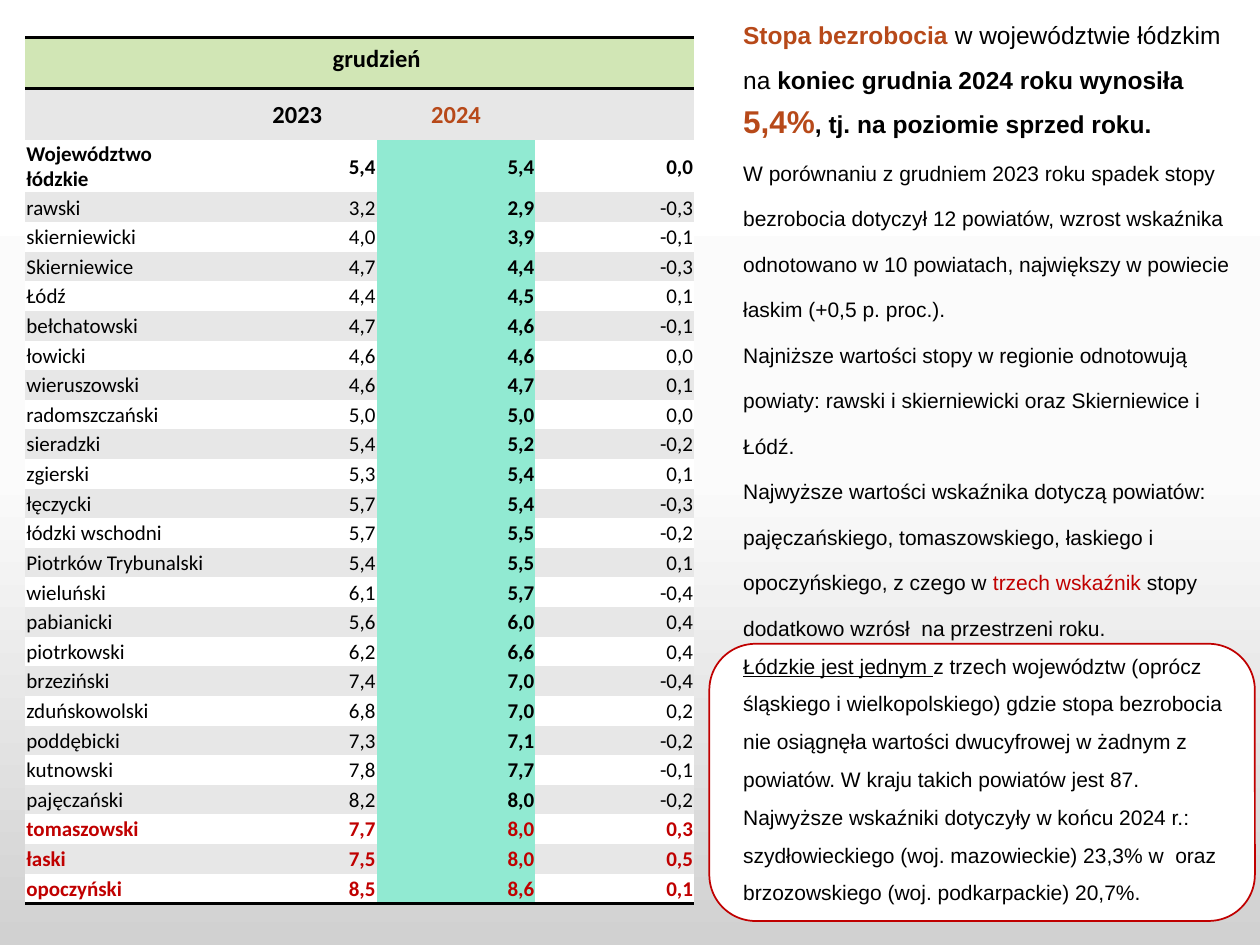
from copy import deepcopy

from pptx import Presentation
from pptx.dml.color import RGBColor
from pptx.enum import shapes, text
from pptx.oxml import parse_xml
from pptx.oxml.ns import nsdecls, qn
from pptx.util import Inches, Pt

BLACK = RGBColor(0x00, 0x00, 0x00)
WHITE = RGBColor(0xFF, 0xFF, 0xFF)
STRIPE = RGBColor(0xE7, 0xE7, 0xE7)
GREEN = RGBColor(0xD1, 0xE6, 0xB5)
MINT = RGBColor(0x91, 0xEA, 0xD2)
RUST = RGBColor(0xB7, 0x49, 0x19)
RED = RGBColor(0xC0, 0x00, 0x00)
BACKDROP = [(0, WHITE), (0.5, RGBColor(0xFB, 0xFB, 0xFB)), (1, RGBColor(0xD1, 0xD1, 0xD1))]

# Content: county, rate in 2023, rate in 2024, change
MONTH = "grudzień"
YEARS = ["", "2023", "2024", ""]
RATES = [
    ("Województwo łódzkie", "5,4", "5,4", "0,0"),
    ("rawski", "3,2", "2,9", "-0,3"),
    ("skierniewicki", "4,0", "3,9", "-0,1"),
    ("Skierniewice", "4,7", "4,4", "-0,3"),
    ("Łódź", "4,4", "4,5", "0,1"),
    ("bełchatowski", "4,7", "4,6", "-0,1"),
    ("łowicki", "4,6", "4,6", "0,0"),
    ("wieruszowski", "4,6", "4,7", "0,1"),
    ("radomszczański", "5,0", "5,0", "0,0"),
    ("sieradzki", "5,4", "5,2", "-0,2"),
    ("zgierski", "5,3", "5,4", "0,1"),
    ("łęczycki", "5,7", "5,4", "-0,3"),
    ("łódzki wschodni", "5,7", "5,5", "-0,2"),
    ("Piotrków Trybunalski", "5,4", "5,5", "0,1"),
    ("wieluński", "6,1", "5,7", "-0,4"),
    ("pabianicki", "5,6", "6,0", "0,4"),
    ("piotrkowski", "6,2", "6,6", "0,4"),
    ("brzeziński", "7,4", "7,0", "-0,4"),
    ("zduńskowolski", "6,8", "7,0", "0,2"),
    ("poddębicki", "7,3", "7,1", "-0,2"),
    ("kutnowski", "7,8", "7,7", "-0,1"),
    ("pajęczański", "8,2", "8,0", "-0,2"),
    ("tomaszowski", "7,7", "8,0", "0,3"),
    ("łaski", "7,5", "8,0", "0,5"),
    ("opoczyński", "8,5", "8,6", "0,1"),
]
HIGHEST = {"tomaszowski", "łaski", "opoczyński"}

# Paragraphs: line spacing, then runs of (text, size, colour, bold, underline)
COMMENTARY = [
    (Pt(26), [
        ("Stopa bezrobocia ", 14, RUST, True, False),
        ("w województwie łódzkim na ", 14, BLACK, False, False),
        ("koniec grudnia 2024 roku wynosiła ", 14, BLACK, True, False),
        ("5,4%", 18, RUST, True, False),
        (", tj. na poziomie sprzed roku.", 14, BLACK, True, False)]),
    (Pt(26), [
        ("W porównaniu z grudniem 2023 roku spadek stopy bezrobocia dotyczył 12 powiatów, "
         "wzrost wskaźnika odnotowano w 10 powiatach, największy w powiecie łaskim "
         "(+0,5 p. proc.).", 12, BLACK, False, False)]),
    (Pt(26), [
        ("Najniższe wartości stopy w regionie odnotowują powiaty: rawski i skierniewicki "
         "oraz Skierniewice i Łódź.", 12, BLACK, False, False)]),
    (Pt(26), [
        ("Najwyższe wartości wskaźnika dotyczą powiatów: pajęczańskiego, tomaszowskiego, "
         "łaskiego i opoczyńskiego, z czego w ", 12, BLACK, False, False),
        ("trzech wskaźnik", 12, RED, False, False),
        (" stopy dodatkowo wzrósł  na przestrzeni roku.", 12, BLACK, False, False)]),
    (1.5, [
        ("Łódzkie jest jednym ", 12, BLACK, False, True),
        ("z trzech województw (oprócz śląskiego i wielkopolskiego) gdzie stopa bezrobocia "
         "nie osiągnęła wartości dwucyfrowej w żadnym z powiatów. W kraju takich powiatów "
         "jest 87. Najwyższe wskaźniki dotyczyły w końcu 2024 r.: szydłowieckiego "
         "(woj. mazowieckie) 23,3% w  oraz brzozowskiego (woj. podkarpackie) 20,7%.",
         12, BLACK, False, False)]),
]

NO_GRID_STYLE = "{2D5ABB26-0587-4C30-8999-92F81FD0307C}"
TABLE_LEFT, TABLE_TOP, TABLE_WIDTH, TABLE_HEIGHT = 0.2, 0.3, 5.31, 6.86
NUMBER_WIDTH = 1.26
TOP_ROWS = [0.4, 0.4, 0.41]  # month, years, whole region


def style_run(run, font_name, size, color, bold, underline=False):
    font = run.font
    font.name, font.size, font.bold, font.underline = font_name, Pt(size), bold, underline
    font.color.rgb = color


def fill_cell(cell, fill):
    cell.fill.solid()
    cell.fill.fore_color.rgb = fill


def write_cell(cell, words, size, color, bold, align):
    cell.vertical_anchor = text.MSO_ANCHOR.MIDDLE
    cell.margin_left = cell.margin_right = cell.margin_top = Inches(0.01)
    cell.margin_bottom = 0
    cell.text = words
    paragraph = cell.text_frame.paragraphs[0]
    paragraph.alignment = align
    for run in paragraph.runs:
        style_run(run, "Calibri", size, color, bold)


def rule_cell(cell, *sides):
    """Black 2 pt rules on the given sides, listed in order: T before B."""
    for index, side in enumerate(sides):
        cell._tc.get_or_add_tcPr().insert(index, parse_xml(
            f'<a:ln{side} {nsdecls("a")} w="{Pt(2)}"><a:solidFill>'
            f'<a:srgbClr val="{BLACK}"/></a:solidFill></a:ln{side}>'))


prs = Presentation()
prs.slide_width, prs.slide_height = Inches(10), Inches(7.5)
slide = prs.slides.add_slide(prs.slide_layouts[6])

# Background gradient, top to bottom
backdrop = slide.background.fill
backdrop.gradient()
backdrop.gradient_angle = 270
stop_list = next(slide._element.iter(qn("a:gsLst")))
stop_list.append(deepcopy(stop_list[-1]))
for stop, (position, color) in zip(backdrop.gradient_stops, BACKDROP):
    stop.position = position
    stop.color.rgb = color

# Frame behind the last paragraph
frame = slide.shapes.add_shape(shapes.MSO_SHAPE.ROUNDED_RECTANGLE, Inches(5.63),
                               Inches(5.11), Inches(4.33), Inches(2.2))
frame.shadow.inherit = False
frame.fill.solid()
frame.fill.fore_color.rgb = WHITE
frame.line.color.rgb = RED
frame.line.width = Pt(1)

# Table grid
table = slide.shapes.add_table(len(RATES) + 2, 4, Inches(TABLE_LEFT), Inches(TABLE_TOP),
                               Inches(TABLE_WIDTH), Inches(TABLE_HEIGHT)).table
table._tbl.tblPr.find(qn("a:tableStyleId")).text = NO_GRID_STYLE
table.first_row = table.horz_banding = False
for column, width in zip(table.columns, [TABLE_WIDTH - 3 * NUMBER_WIDTH] + [NUMBER_WIDTH] * 3):
    column.width = Inches(width)
county_height = (TABLE_HEIGHT - sum(TOP_ROWS)) / (len(RATES) - 1)
for row, height in zip(table.rows, TOP_ROWS + [county_height] * (len(RATES) - 1)):
    row.height = Inches(height)

# Month and year headings
for col, year in enumerate(YEARS):
    month_cell, year_cell = table.cell(0, col), table.cell(1, col)
    fill_cell(month_cell, GREEN)
    rule_cell(month_cell, "T", "B")
    fill_cell(year_cell, STRIPE)
    if year:
        write_cell(year_cell, year, 14, RUST if year == "2024" else BLACK, True,
                   text.PP_ALIGN.CENTER)
month_title = table.cell(0, 1)
month_title.merge(table.cell(0, 2))
month_title.text = MONTH
month_title.text_frame.paragraphs[0].alignment = text.PP_ALIGN.CENTER
style_run(month_title.text_frame.paragraphs[0].runs[0], "Calibri", 14, BLACK, True)

# Rates, with the 2024 column picked out
for index, rates in enumerate(RATES):
    county = rates[0]
    for col, words in enumerate(rates):
        cell = table.cell(index + 2, col)
        bold = index == 0 or col == 2 or county in HIGHEST
        write_cell(cell, words, 12, RED if county in HIGHEST else BLACK, bold,
                   text.PP_ALIGN.RIGHT if col else text.PP_ALIGN.LEFT)
        fill_cell(cell, MINT if col == 2 else STRIPE if index % 2 else WHITE)
        if index == len(RATES) - 1:
            rule_cell(cell, "B")

# Commentary
commentary = slide.shapes.add_textbox(Inches(5.8), Inches(-0.02), Inches(4.17),
                                      Inches(7.33)).text_frame
commentary.word_wrap = True
commentary.auto_size = text.MSO_AUTO_SIZE.SHAPE_TO_FIT_TEXT
for index, (spacing, runs) in enumerate(COMMENTARY):
    paragraph = commentary.add_paragraph() if index else commentary.paragraphs[0]
    paragraph.line_spacing = spacing
    for words, *style in runs:
        run = paragraph.add_run()
        run.text = words
        style_run(run, "Arial", *style)

prs.save("out.pptx")
